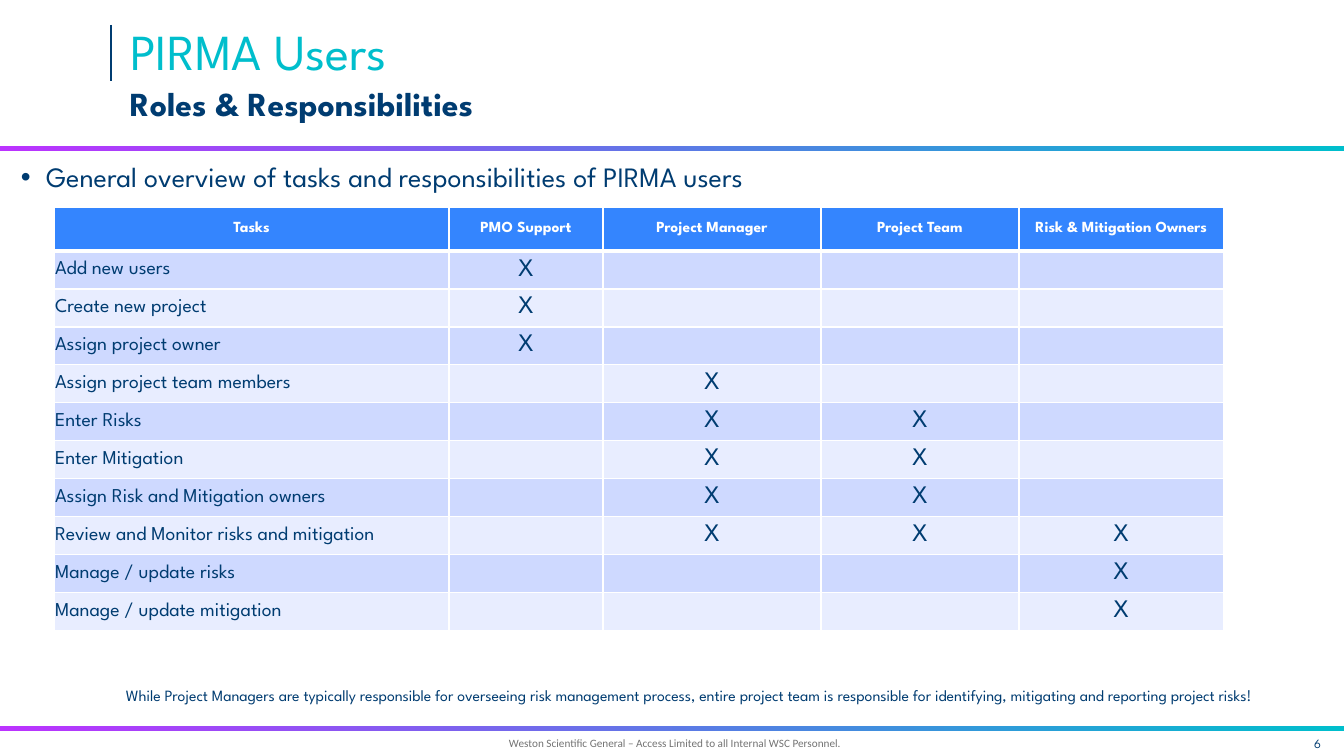
import pptx
import pptx.util
import pptx.dml.color
import pptx.enum.shapes
import pptx.enum.text
import pptx.oxml

PX = 914400 / 100.8
HUE = {
    "navy": "003C71", "teal": "00BECC", "violet": "BB33FF", "grey": "737373",
    "white": "FFFFFF", "head": "3485FE", "dark": "CED9FF", "light": "E8EDFF",
}
RGB = {name: pptx.dml.color.RGBColor.from_string(code) for name, code in HUE.items()}
ALIGN = pptx.enum.text.PP_ALIGN
MID = pptx.enum.text.MSO_ANCHOR.MIDDLE
TOP = pptx.enum.text.MSO_ANCHOR.TOP
NS = 'xmlns:a="http://schemas.openxmlformats.org/drawingml/2006/main"'


def px(*nums):
    return [pptx.util.Emu(round(num * PX)) for num in nums]


def write(para, words, size, hue, bold=False, face="League Spartan", **form):
    for key, val in form.items():
        setattr(para, key, val)
    run = para.add_run()
    run.text = words
    font = {"size": pptx.util.Pt(size), "bold": bold, "name": face}
    for key, val in font.items():
        setattr(run.font, key, val)
    run.font.color.rgb = RGB[hue]


deck = pptx.Presentation()
deck.slide_width, deck.slide_height = px(1344, 756)
slide = deck.slides.add_slide(deck.slide_layouts[6])
shapes = slide.shapes

for top in (726, 146):
    bar = shapes.add_shape(pptx.enum.shapes.MSO_SHAPE.RECTANGLE, *px(0, top, 1344, 5))
    bar.shadow.inherit = False
    bar.line.fill.background()
    bar.fill.gradient()
    bar.fill.gradient_angle = 0
    for stop, hue in zip(bar.fill.gradient_stops, ("violet", "teal")):
        stop.color.rgb = RGB[hue]

rule = shapes.add_connector(pptx.enum.shapes.MSO_CONNECTOR.STRAIGHT, *px(111, 25, 111, 81))
rule.line.color.rgb = RGB["navy"]
rule.line.width = pptx.util.Pt(1)
rule._element.spPr.append(pptx.oxml.parse_xml(f"<a:effectLst {NS}/>"))

TEXTS = [
    ((509, 736, 333, 13), (0, 0, 0, 0), TOP,
     "Weston Scientific General – Access Limited to all Internal WSC Personnel.",
     {"size": 8, "hue": "grey", "face": "Calibri"}),
    ((130, 84, 1001, 46), (0, 5, 0, 5), TOP, "Roles & Responsibilities",
     {"size": 24, "hue": "navy", "bold": True, "line_spacing": 0.85}),
    ((130, 22, 1022, 62), (0, 5, 10, 5), TOP, "PIRMA Users",
     {"size": 36, "hue": "teal", "line_spacing": 0.9}),
    ((1041, 731, 280, 25), (0, 5, 0, 5), MID, "6",
     {"size": 9, "hue": "navy", "alignment": ALIGN.RIGHT}),
    ((11, 158, 1310, 53), (10, 5, 10, 5), TOP,
     "General overview of tasks and responsibilities of PIRMA users",
     {"size": 20, "hue": "navy", "line_spacing": 0.9}),
    ((116, 669, 1215, 53), (10, 5, 10, 5), MID,
     "While Project Managers are typically responsible for overseeing risk management process, "
     "entire project team is responsible for identifying, mitigating and reporting project risks!",
     {"size": 11.2, "hue": "navy"}),
]
SIDES = ("margin_left", "margin_top", "margin_right", "margin_bottom")
for place, pads, anchor, words, form in TEXTS:
    frame = shapes.add_textbox(*px(*place)).text_frame
    frame.word_wrap = True
    frame.vertical_anchor = anchor
    for side, pad in zip(SIDES, px(*pads)):
        setattr(frame, side, pad)
    para = frame.paragraphs[0]
    if words.startswith("General"):
        props = para._p.get_or_add_pPr()
        props.set("marL", "228600")
        props.set("indent", "-228600")
        for mark in ('buFont %s typeface="Arial"', 'buChar %s char="•"'):
            props.append(pptx.oxml.parse_xml(f"<a:{mark % NS}/>"))
    write(para, words, **form)

HEADS = ["Tasks", "PMO Support", "Project Manager", "Project Team", "Risk & Mitigation Owners"]
TASKS = [
    ("Add new users", [1]),
    ("Create new project", [1]),
    ("Assign project owner", [1]),
    ("Assign project team members", [2]),
    ("Enter Risks", [2, 3]),
    ("Enter Mitigation", [2, 3]),
    ("Assign Risk and Mitigation owners", [2, 3]),
    ("Review and Monitor risks and mitigation", [2, 3, 4]),
    ("Manage / update risks", [4]),
    ("Manage / update mitigation", [4]),
]
WIDTHS = px(395, 154, 218, 198, 205)
HEIGHTS = px(44, *[38] * len(TASKS))
table = shapes.add_table(
    len(HEIGHTS), len(WIDTHS), *px(54, 207), sum(WIDTHS), sum(HEIGHTS)).table
table.first_row = table.horz_banding = False
for col, width in zip(table.columns, WIDTHS):
    col.width = width
for row, height in zip(table.rows, HEIGHTS):
    row.height = height

grid = [HEADS] + [
    [task] + ["X" if col in marks else "" for col in range(1, len(HEADS))]
    for task, marks in TASKS
]
for r, line in enumerate(grid):
    for c, words in enumerate(line):
        cell = table.cell(r, c)
        cell.vertical_anchor = MID
        for side in SIDES:
            setattr(cell, side, px(1)[0])
        cell.fill.solid()
        cell.fill.fore_color.rgb = RGB["head" if r == 0 else "dark" if r % 2 else "light"]
        for n, edge in enumerate("LRTB"):
            thick = 3 if (r, edge) in ((0, "B"), (1, "T")) else 1
            cell._tc.tcPr.insert(n, pptx.oxml.parse_xml(
                f'<a:ln{edge} {NS} w="{thick * 12700}"><a:solidFill>'
                f'<a:srgbClr val="{HUE["white"]}"/></a:solidFill></a:ln{edge}>'))
        if words:
            write(cell.text_frame.paragraphs[0], words,
                  11 if r == 0 else 18 if c else 14,
                  "navy" if r else "white", bold=r == 0,
                  alignment=ALIGN.LEFT if r and c == 0 else ALIGN.CENTER)

deck.save("out.pptx")
